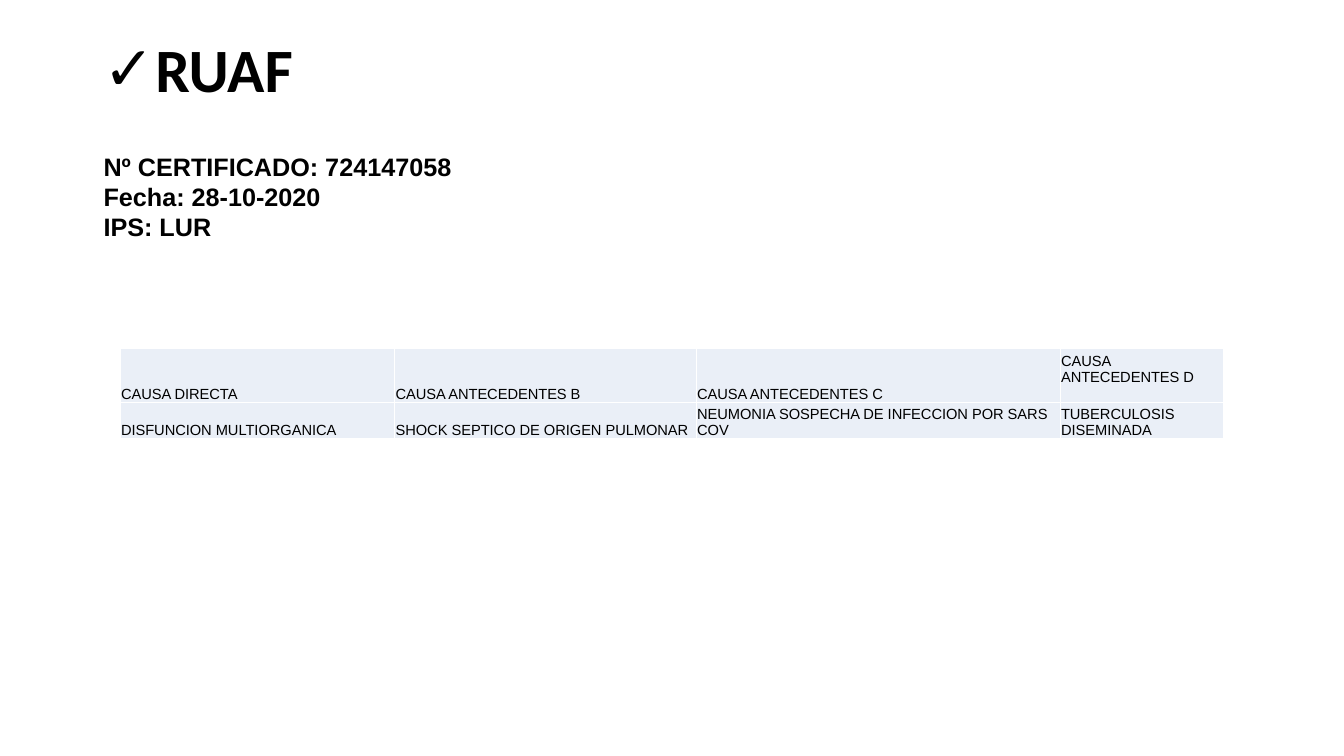
from dataclasses import dataclass

from lxml.etree import SubElement
from pptx import Presentation
from pptx.dml.color import RGBColor
from pptx.enum.text import MSO_ANCHOR as Anchor, MSO_AUTO_SIZE as AutoSize, PP_ALIGN as Align
from pptx.oxml.ns import qn
from pptx.slide import Slide
from pptx.table import _Cell as Cell
from pptx.text.text import _Paragraph as Paragraph
from pptx.util import Cm, Pt

BLACK = "000000"
WHITE = "FFFFFF"
PALE_BLUE = "EAEFF7"

CERTIFICATE = ["Nº CERTIFICADO: 724147058", "Fecha: 28-10-2020", "IPS: LUR"]


@dataclass(frozen=True)
class Cause:
    heading: str
    diagnosis: str
    width: float
    heading_anchor: Anchor = Anchor.BOTTOM
    heading_top: float = 0.02


CAUSES = [
    Cause("CAUSA DIRECTA", "DISFUNCION MULTIORGANICA", 6.92),
    Cause("CAUSA ANTECEDENTES B", "SHOCK SEPTICO DE ORIGEN PULMONAR", 7.6),
    Cause("CAUSA ANTECEDENTES C", "NEUMONIA SOSPECHA DE INFECCION POR SARS COV", 9.17),
    Cause("CAUSA ANTECEDENTES D", "TUBERCULOSIS DISEMINADA", 4.12, Anchor.TOP, 0.1),
]
ROW_HEIGHTS = [1.36, 0.91]


def color(code: str) -> RGBColor:
    return RGBColor.from_string(code)


def write(para: Paragraph, text: str, *, size: float, font: str = "Arial",
          bold: bool = False, code: str = BLACK) -> None:
    span = para.add_run()
    span.text = text
    span.font.size = Pt(size)
    span.font.name = font
    span.font.bold = bold
    span.font.color.rgb = color(code)


def add_check_bullet(para: Paragraph, indent: float) -> None:
    properties = para._p.get_or_add_pPr()
    properties.set("marL", str(Cm(indent)))
    properties.set("indent", str(-Cm(indent)))
    SubElement(properties, qn("a:buFont"), typeface="Arial")
    SubElement(properties, qn("a:buChar"), char="✓")


def add_borders(cell: Cell, code: str, width: float) -> None:
    properties = cell._tc.get_or_add_tcPr()
    for side in ("lnL", "lnR", "lnT", "lnB"):
        line = SubElement(properties, qn(f"a:{side}"), w=str(Pt(width)))
        fill = SubElement(line, qn("a:solidFill"))
        SubElement(fill, qn("a:srgbClr"), val=code)


def fill_cell(cell: Cell, text: str, anchor: Anchor = Anchor.BOTTOM, top: float = 0.02) -> None:
    add_borders(cell, WHITE, 1)
    cell.fill.solid()
    cell.fill.fore_color.rgb = color(PALE_BLUE)
    cell.vertical_anchor = anchor
    cell.margin_left = cell.margin_right = Cm(0.02)
    cell.margin_top = Cm(top)
    cell.margin_bottom = Cm(0)
    write(cell.text_frame.paragraphs[0], text, size=10.5)


def add_title(page: Slide) -> None:
    title = page.shapes.title
    title.left, title.top, title.width, title.height = Cm(2.36), Cm(0), Cm(29.21), Cm(3.68)
    frame = title.text_frame
    frame.auto_size = AutoSize.NONE
    frame.vertical_anchor = Anchor.MIDDLE
    para = frame.paragraphs[0]
    para.alignment = Align.LEFT
    para.line_spacing = 0.9
    add_check_bullet(para, 0.79)
    write(para, "RUAF", size=44, font="Calibri", bold=True)


def add_certificate(page: Slide) -> None:
    box = page.shapes.add_textbox(Cm(2.36), Cm(3.68), Cm(24.13), Cm(2.57))
    frame = box.text_frame
    frame.word_wrap = True
    frame.auto_size = AutoSize.SHAPE_TO_FIT_TEXT
    for index, text in enumerate(CERTIFICATE):
        para = frame.add_paragraph() if index else frame.paragraphs[0]
        write(para, text, size=18, bold=True)


def add_causes(page: Slide) -> None:
    table = page.shapes.add_table(
        len(ROW_HEIGHTS), len(CAUSES), Cm(3.03), Cm(8.79),
        Cm(sum(cause.width for cause in CAUSES)), Cm(sum(ROW_HEIGHTS)),
    ).table
    table.first_row = table.horz_banding = False
    for row, height in zip(table.rows, ROW_HEIGHTS):
        row.height = Cm(height)
    for index, cause in enumerate(CAUSES):
        table.columns[index].width = Cm(cause.width)
        fill_cell(table.cell(0, index), cause.heading, cause.heading_anchor, cause.heading_top)
        fill_cell(table.cell(1, index), cause.diagnosis)


def main() -> None:
    deck = Presentation()
    deck.slide_width, deck.slide_height = Cm(33.87), Cm(19.05)
    page = deck.slides.add_slide(deck.slide_layouts.get_by_name("Title Only"))
    add_title(page)
    add_certificate(page)
    add_causes(page)
    deck.save("out.pptx")


if __name__ == "__main__":
    main()
